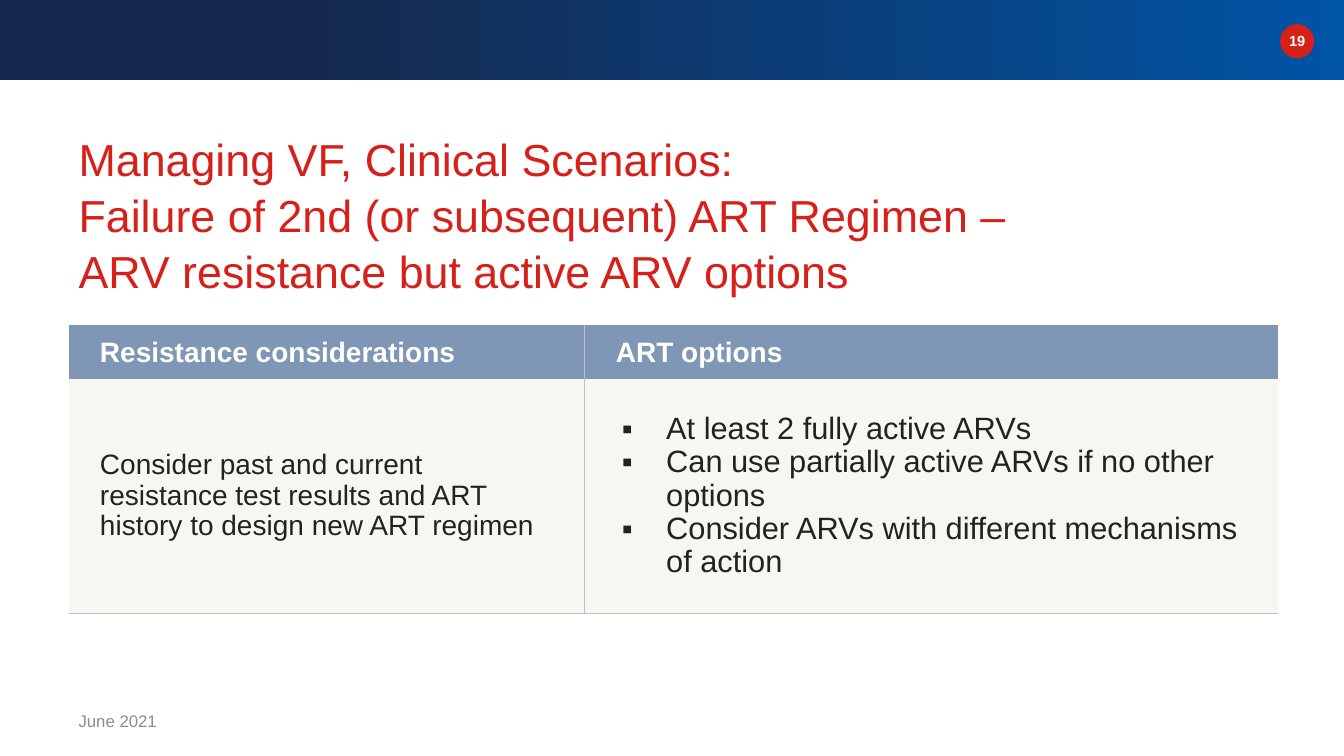
from lxml import etree
from pptx import Presentation
from pptx import util as u
from pptx.dml.color import RGBColor
from pptx.enum import shapes, text
from pptx.oxml.ns import qn

RED, WHITE, GREY = "D6201A", "FFFFFF", "BFBFBF"
DARK, HEADER, CREAM = "222222", "8096B6", "F8F6F0"
LEFT = 1.73


def colour(value):
    return RGBColor.from_string(value)


def box(left, top, width, height):
    return [u.Cm(length) for length in (left, top, width, height)]


def add_bullet(paragraph, mark, hex_colour):
    properties = paragraph._p.get_or_add_pPr()
    properties.set("marL", str(u.Cm(1.27)))
    properties.set("indent", str(u.Cm(-1.12)))
    bullet_colour = etree.SubElement(properties, qn("a:buClr"))
    etree.SubElement(bullet_colour, qn("a:srgbClr"), val=hex_colour)
    etree.SubElement(properties, qn("a:buFont"), typeface="Arial")
    etree.SubElement(properties, qn("a:buChar"), char=mark)


def write(frame, lines, size=20, hex_colour=DARK, bold=False, bullet=None,
          align=text.PP_ALIGN.LEFT, spacing=None):
    """Write one paragraph per line in a single format."""
    frame.word_wrap = True
    for index, line in enumerate(lines):
        paragraph = frame.add_paragraph() if index else frame.paragraphs[0]
        paragraph.text = line
        paragraph.alignment = align
        if spacing:
            paragraph.line_spacing = spacing
        if bullet:
            add_bullet(paragraph, bullet, hex_colour)
        for run in paragraph.runs:
            run.font.name = "Arial"
            run.font.size = u.Pt(size)
            run.font.bold = bold
            run.font.color.rgb = colour(hex_colour)


def add_text(slide, place, lines, anchor=text.MSO_ANCHOR.TOP, **text_format):
    frame = slide.shapes.add_textbox(*box(*place)).text_frame
    frame.vertical_anchor = anchor
    write(frame, lines, **text_format)


def add_plain_shape(slide, kind, place):
    shape = slide.shapes.add_shape(kind, *box(*place))
    shape.shadow.inherit = False
    shape.line.fill.background()
    return shape


def add_banner(slide):
    banner = add_plain_shape(slide, shapes.MSO_SHAPE.RECTANGLE, (0, 0, 33.87, 2.03))
    banner.fill.gradient()
    banner.fill.gradient_angle = 0
    stops = ((0.23, "15294E"), (1, "0054A6"))
    for stop, (position, hex_colour) in zip(banner.fill.gradient_stops, stops):
        stop.position = position
        stop.color.rgb = colour(hex_colour)


def add_page_number(slide, number):
    badge = add_plain_shape(slide, shapes.MSO_SHAPE.OVAL, (32.26, 0.61, 0.86, 0.86))
    badge.fill.solid()
    badge.fill.fore_color.rgb = colour(RED)
    add_text(slide, (32.13, 0.69, 1.12, 0.71), [number], size=10.5,
             hex_colour=WHITE, bold=True, align=text.PP_ALIGN.CENTER)


def set_borders(cell, visible):
    properties = cell._tc.get_or_add_tcPr()
    for side in "LRTB":
        line = etree.SubElement(properties, qn("a:ln" + side), w=str(u.Pt(1)))
        if side in visible:
            fill = etree.SubElement(line, qn("a:solidFill"))
            etree.SubElement(fill, qn("a:srgbClr"), val=GREY)
        else:
            etree.SubElement(line, qn("a:noFill"))


def fill_cell(cell, lines, fill, borders, **text_format):
    cell.vertical_anchor = text.MSO_ANCHOR.MIDDLE
    cell.margin_left = cell.margin_right = u.Cm(0.79)
    cell.margin_top = cell.margin_bottom = u.Cm(0.15)
    set_borders(cell, borders)
    cell.fill.solid()
    cell.fill.fore_color.rgb = colour(fill)
    write(cell.text_frame, lines, **text_format)


def add_options_table(slide):
    table = slide.shapes.add_table(2, 2, *box(LEFT, 8.2, 30.48, 7.26)).table
    table.first_row = table.horz_banding = False
    for column, width in zip(table.columns, (13, 17.48)):
        column.width = u.Cm(width)
    for row, height in zip(table.rows, (1.34, 5.92)):
        row.height = u.Cm(height)

    # Header row
    headings = ("Resistance considerations", "ART options")
    for index, (heading, divider) in enumerate(zip(headings, "RL")):
        fill_cell(table.cell(0, index), [heading], HEADER, divider,
                  hex_colour=WHITE, bold=True, spacing=1.02)

    # Body row
    fill_cell(table.cell(1, 0), [
        "Consider past and current resistance test results and ART history "
        "to design new ART regimen",
    ], CREAM, "RB", spacing=0.97)
    fill_cell(table.cell(1, 1), [
        "At least 2 fully active ARVs",
        "Can use partially active ARVs if no other options",
        "Consider ARVs with different mechanisms of action",
    ], CREAM, "LB", size=22, bullet="▪", spacing=0.97)


def main():
    presentation = Presentation()
    presentation.slide_width = u.Cm(33.87)
    presentation.slide_height = u.Cm(19.05)
    slide = presentation.slides.add_slide(presentation.slide_layouts[6])

    # Banner with page number
    add_banner(slide)
    add_page_number(slide, "19")

    # Title
    add_text(slide, (LEFT, 3.15, 29.21, 4.9), [
        "Managing VF, Clinical Scenarios:\n"
        "Failure of 2nd (or subsequent) ART Regimen –\n"
        "ARV resistance but active ARV options",
    ], size=32, hex_colour=RED, spacing=1.04)

    # Table and date
    add_options_table(slide)
    add_text(slide, (LEFT, 17.65, 7.62, 1.02), ["June 2021"], size=12,
             hex_colour="8D8D8D", anchor=text.MSO_ANCHOR.MIDDLE)

    presentation.save("out.pptx")


if __name__ == "__main__":
    main()
